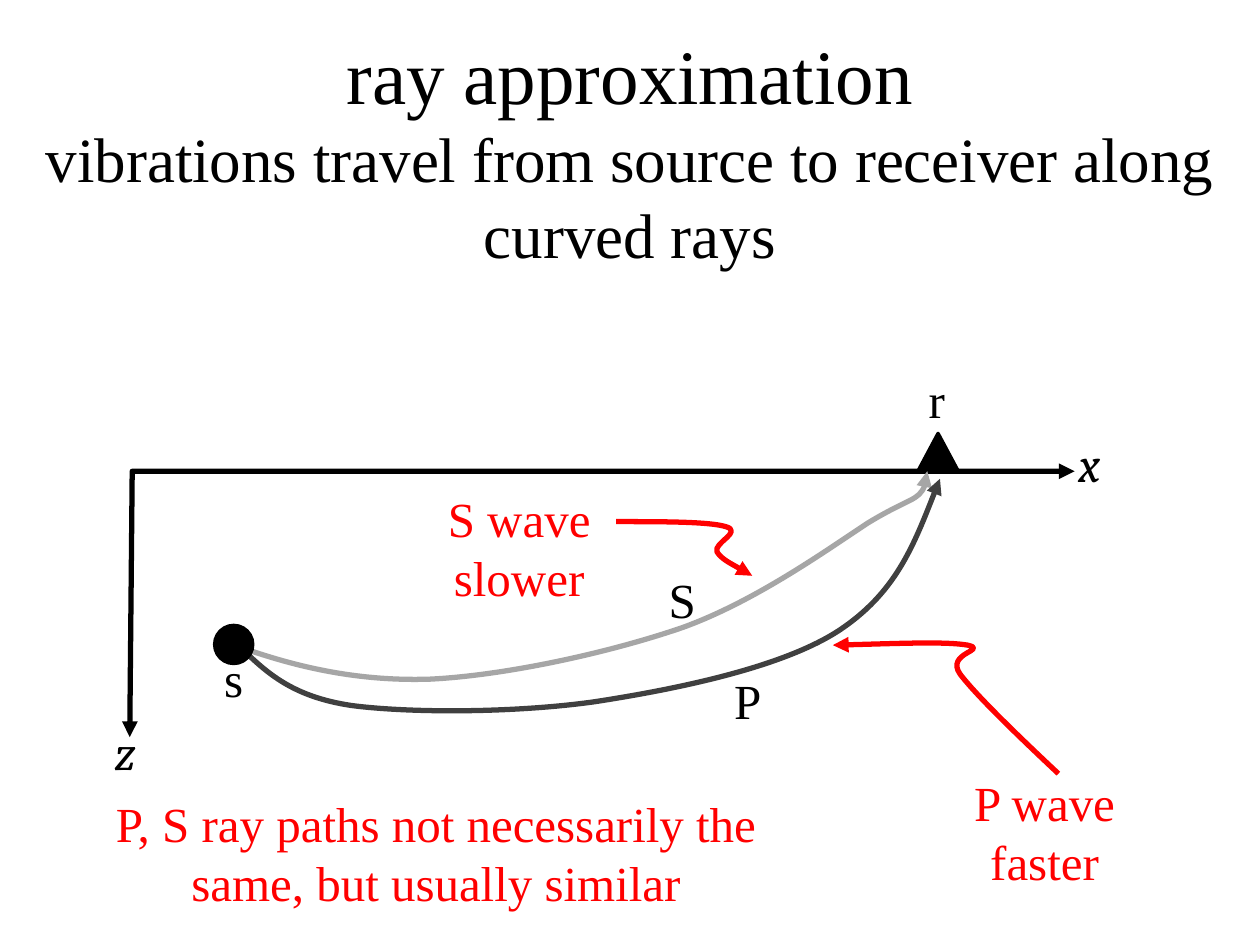
from pptx import Presentation
from pptx.dml.color import RGBColor
from pptx.enum.shapes import MSO_SHAPE
from pptx.enum.text import MSO_AUTO_SIZE, PP_ALIGN
from pptx.oxml.ns import qn
from pptx.oxml.xmlchemy import OxmlElement
from pptx.util import Inches, Pt

BLACK = RGBColor(0x00, 0x00, 0x00)
RED = RGBColor(0xFF, 0x00, 0x00)
LIGHT_GRAY = RGBColor(0xA6, 0xA6, 0xA6)
DARK_GRAY = RGBColor(0x40, 0x40, 0x40)
SERIF = "Times New Roman"
MATH = "Cambria"


def write_text(paragraph, text, size=28, color=BLACK, font=SERIF, italic=False):
    paragraph.alignment = PP_ALIGN.CENTER
    run = paragraph.add_run()
    run.text = text
    run.font.size = Pt(size)
    run.font.name = font
    run.font.italic = italic
    run.font.color.rgb = color


def bend_segments(shape):
    """Turn every three line segments of a freeform into one cubic curve."""
    lines = list(shape._element.spPr.iter(qn("a:lnTo")))
    for start in range(0, len(lines), 3):
        curve = OxmlElement("a:cubicBezTo")
        lines[start].addprevious(curve)
        for line in lines[start:start + 3]:
            curve.append(line[0])
            line.getparent().remove(line)


class Drawing:
    line_width = Pt(3)
    label_size = (0.83, 0.57)

    def __init__(self, slide):
        self.slide = slide
        self.shapes = slide.shapes

    def start_group(self):
        self.shapes = self.slide.shapes.add_group_shape().shapes

    def end_group(self):
        self.shapes = self.slide.shapes

    def text(self, left, top, width, height, lines, sizes=(28, 28), **style):
        box = self.shapes.add_textbox(*map(Inches, (left, top, width, height)))
        frame = box.text_frame
        frame.word_wrap = True
        frame.auto_size = MSO_AUTO_SIZE.SHAPE_TO_FIT_TEXT
        for index, (line, size) in enumerate(zip(lines, sizes)):
            paragraph = frame.add_paragraph() if index else frame.paragraphs[0]
            write_text(paragraph, line, size=size, **style)

    def label(self, left, top, letter, **style):
        self.text(left, top, *self.label_size, [letter], **style)

    def solid(self, kind, left, top, width, height, outline=None):
        shape = self.shapes.add_shape(kind, *map(Inches, (left, top, width, height)))
        shape.shadow.inherit = False
        shape.fill.solid()
        shape.fill.fore_color.rgb = BLACK
        if outline:
            shape.line.color.rgb = BLACK
            shape.line.width = outline
        else:
            shape.line.fill.background()

    def arrow(self, points, color, ends=("tailEnd",), curved=True):
        """Draw an open outline; a curved one has two control points per node."""
        start, *others = [(Inches(x), Inches(y)) for x, y in points]
        builder = self.shapes.build_freeform(*start)
        builder.add_line_segments(others, close=False)
        shape = builder.convert_to_shape()
        if curved:
            bend_segments(shape)
        shape.shadow.inherit = False
        shape.fill.background()
        shape.line.color.rgb = color
        shape.line.width = self.line_width
        for end in ends:
            arrowhead = OxmlElement(f"a:{end}")
            arrowhead.set("type", "triangle")
            shape.line._get_or_add_ln().append(arrowhead)


def main():
    presentation = Presentation()
    presentation.slide_width = Inches(10)
    presentation.slide_height = Inches(7.5)
    drawing = Drawing(presentation.slides.add_slide(presentation.slide_layouts[6]))

    drawing.start_group()
    drawing.arrow([(1.03, 5.85), (1.05, 3.74), (8.53, 3.74)], BLACK,
                  ends=("headEnd", "tailEnd"), curved=False)
    drawing.solid(MSO_SHAPE.ISOSCELES_TRIANGLE, 7.29, 3.44, 0.31, 0.29, outline=Pt(2))
    drawing.label(0.58, 5.68, "z", font=MATH, italic=True)
    drawing.label(8.23, 3.39, "x", font=MATH, italic=True)
    s_ray = [(1.86, 5.12), (2.33, 5.29), (2.83, 5.41), (3.42, 5.39),
             (4.02, 5.36), (4.84, 5.18), (5.42, 4.98),
             (6, 4.77), (6.57, 4.36), (6.89, 4.15),
             (7.22, 3.95), (7.35, 3.98), (7.36, 3.74)]
    p_ray = [(1.92, 5.15), (2.12, 5.34), (2.32, 5.53), (2.79, 5.6),
             (3.25, 5.66), (4.08, 5.66), (4.72, 5.57),
             (5.37, 5.47), (6.2, 5.3), (6.65, 5.01),
             (7.11, 4.71), (7.28, 4.26), (7.46, 3.8)]
    drawing.arrow(s_ray, LIGHT_GRAY)
    drawing.arrow(p_ray, DARK_GRAY)
    drawing.label(5.52, 5.27, "P")
    drawing.label(5, 4.47, "S")
    drawing.solid(MSO_SHAPE.OVAL, 1.69, 4.95, 0.33, 0.33)
    drawing.label(1.44, 5.1, "s")
    drawing.label(7.02, 2.88, "r")
    drawing.end_group()

    drawing.text(0, 0.17, 10, 2.05,
                 ["ray approximation",
                  "vibrations travel from source to receiver along curved rays"],
                 sizes=(44, 36))
    p_pointer = [(6.61, 5.12), (7.06, 5.11), (7.51, 5.09), (7.68, 5.12),
                 (7.85, 5.16), (7.5, 5.18), (7.62, 5.35),
                 (7.75, 5.52), (8.07, 5.83), (8.4, 6.14)]
    s_pointer = [(4.89, 4.14), (5.26, 4.14), (5.63, 4.14), (5.76, 4.18),
                 (5.9, 4.22), (5.66, 4.31), (5.69, 4.38),
                 (5.73, 4.44), (5.85, 4.5), (5.97, 4.57)]
    drawing.arrow(p_pointer, RED, ends=("headEnd",))
    drawing.text(6.75, 6.08, 3.08, 1.04, ["P wave", "faster"], color=RED)
    drawing.text(2.58, 3.83, 3.08, 1.04, ["S wave", "slower"], color=RED)
    drawing.arrow(s_pointer, RED)
    drawing.text(0.5, 6.25, 5.92, 1.04,
                 ["P, S ray paths not necessarily the same, but usually similar"],
                 color=RED)

    presentation.save("out.pptx")


if __name__ == "__main__":
    main()
